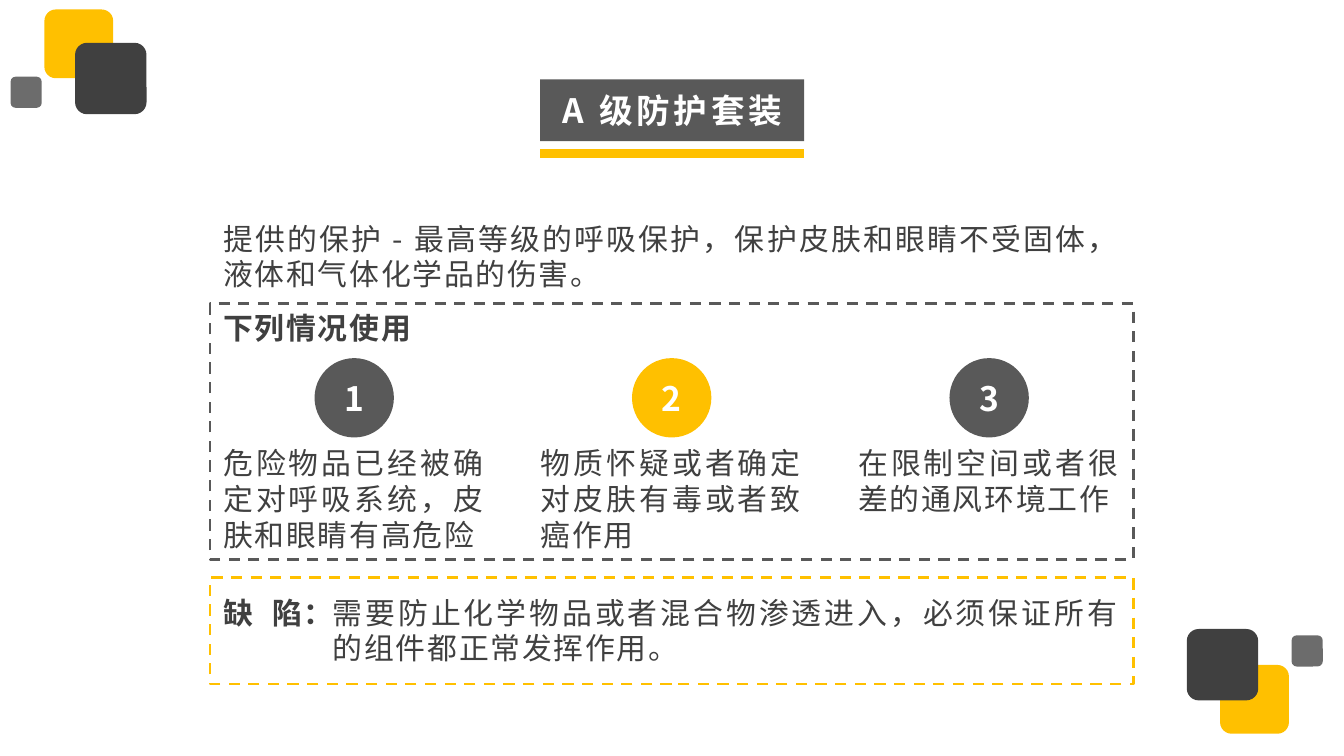
from dataclasses import dataclass
from lxml.etree import SubElement
from pptx import Presentation
from pptx.dml.color import RGBColor as Rgb
from pptx.enum.dml import MSO_LINE_DASH_STYLE as Dash
from pptx.enum.shapes import MSO_CONNECTOR as Link, MSO_SHAPE as Form
from pptx.enum.text import MSO_ANCHOR as Anchor, PP_ALIGN as Align
from pptx.oxml.ns import qn
from pptx.util import Cm, Pt


@dataclass(frozen=True)
class Theme:
    font: str = "Noto Sans CJK SC"
    amber: str = "FFC000"
    charcoal: str = "404040"
    grey: str = "595959"
    white: str = "FFFFFF"
    heading: float = 18
    body: float = 16
    bar: float = 5
    frame: float = 1.5


def write(paragraph, text, font, size, color, bold=False, spacing=0):
    run = paragraph.add_run()
    run.text = text
    run.font.name = font
    run.font.size = Pt(size)
    run.font.bold = bold
    run.font.color.rgb = Rgb.from_string(color)
    props = run.font._element
    props.set("spc", str(round(spacing * 100)))
    SubElement(props, qn("a:ea")).set("typeface", font)


class Board:
    """Draws styled elements on the current slide."""

    def __init__(self, slide, theme):
        self.shapes = slide.shapes
        self.theme = theme

    def solid(self, form, x, y, width, height, color, opacity=100):
        block = self.shapes.add_shape(form, Cm(x), Cm(y), Cm(width), Cm(height))
        block.shadow.inherit = False
        block.fill.solid()
        block.fill.fore_color.rgb = Rgb.from_string(color)
        block.line.fill.background()
        if opacity < 100:
            tint = block._element.spPr.find(".//" + qn("a:srgbClr"))
            SubElement(tint, qn("a:alpha")).set("val", str(opacity * 1000))
        return block

    def badge(self, form, x, y, width, height, color, text, spacing=0):
        frame = self.solid(form, x, y, width, height, color).text_frame
        frame.vertical_anchor = Anchor.MIDDLE
        frame.paragraphs[0].alignment = Align.CENTER
        write(frame.paragraphs[0], text, self.theme.font, self.theme.heading,
              self.theme.white, bold=True, spacing=spacing)

    def bar(self, x, y, width, color):
        line = self.shapes.add_connector(Link.STRAIGHT, Cm(x), Cm(y), Cm(x + width), Cm(y))
        line.line.color.rgb = Rgb.from_string(color)
        line.line.width = Pt(self.theme.bar)
        SubElement(line._element.spPr, qn("a:effectLst"))

    def dashed_frame(self, x, y, width, height, color):
        border = self.shapes.add_shape(Form.RECTANGLE, Cm(x), Cm(y), Cm(width), Cm(height))
        border.shadow.inherit = False
        border.fill.background()
        border.line.color.rgb = Rgb.from_string(color)
        border.line.width = Pt(self.theme.frame)
        border.line.dash_style = Dash.DASH

    def prose(self, x, y, width, height, *pieces, bold=False):
        frame = self.shapes.add_textbox(Cm(x), Cm(y), Cm(width), Cm(height)).text_frame
        frame.word_wrap = True
        frame.paragraphs[0].alignment = Align.JUSTIFY
        for text, spacing in pieces:
            write(frame.paragraphs[0], text, self.theme.font, self.theme.body,
                  self.theme.charcoal, bold=bold, spacing=spacing)


def main():
    deck = Presentation()
    deck.slide_width, deck.slide_height = Cm(25.4), Cm(14.29)
    theme = Theme()
    board = Board(deck.slides.add_slide(deck.slide_layouts[6]), theme)

    corner = [
        (0.84, 0.18, 1.3, theme.amber, 100),
        (1.42, 0.81, 1.35, theme.charcoal, 100),
        (0.2, 1.45, 0.59, theme.charcoal, 77),
    ]
    for x, y, side, color, opacity in corner:
        for left, top in ((x, y), (25.2 - x - side, 14.05 - y - side)):
            board.solid(Form.ROUNDED_RECTANGLE, left, top, side, side, color, opacity)

    title_left, title_width = 10.21, 4.99
    board.badge(Form.RECTANGLE, title_left, 1.5, title_width, 1.17, theme.grey,
                "A 级防护套装", spacing=2)
    board.bar(title_left, 2.9, title_width, theme.amber)

    left, width = 3.97, 17.45
    board.prose(left, 4.04, width, 1.62,
                ("提供的保护 - 最高等级的呼吸保护，保护皮肤和眼睛不受固体，液体和气体化学品的伤害。", 1))
    board.prose(left, 5.72, 5.1, 0.94, ("下列情况使用", 1), bold=True)

    situations = [
        ("危险物品已经被确定对呼吸系统，皮肤和眼睛有高危险", theme.grey),
        ("物质怀疑或者确定对皮肤有毒或者致癌作用", theme.amber),
        ("在限制空间或者很差的通风环境工作", theme.grey),
    ]
    column, circle = 5.45, 1.5
    pitch = (width - column) / (len(situations) - 1)
    for index, (situation, color) in enumerate(situations):
        x = left + index * pitch
        board.badge(Form.OVAL, x + (column - circle) / 2, 6.77, circle, circle,
                    color, str(index + 1))
        board.prose(x, 8.28, column, 2.3, (situation, 1))

    board.prose(left, 11.11, 3.3, 0.94, ("缺", 1), (" ", 5.6), ("陷：", 1), bold=True)
    board.prose(6.04, 11.11, 15.38, 1.62,
                ("需要防止化学物品或者混合物渗透进入，必须保证所有的组件都正常发挥作用。", 1))

    board.dashed_frame(left, 5.74, width, 4.84, theme.grey)
    board.dashed_frame(left, 10.92, width, 2.01, theme.amber)
    deck.save("out.pptx")


if __name__ == "__main__":
    main()
